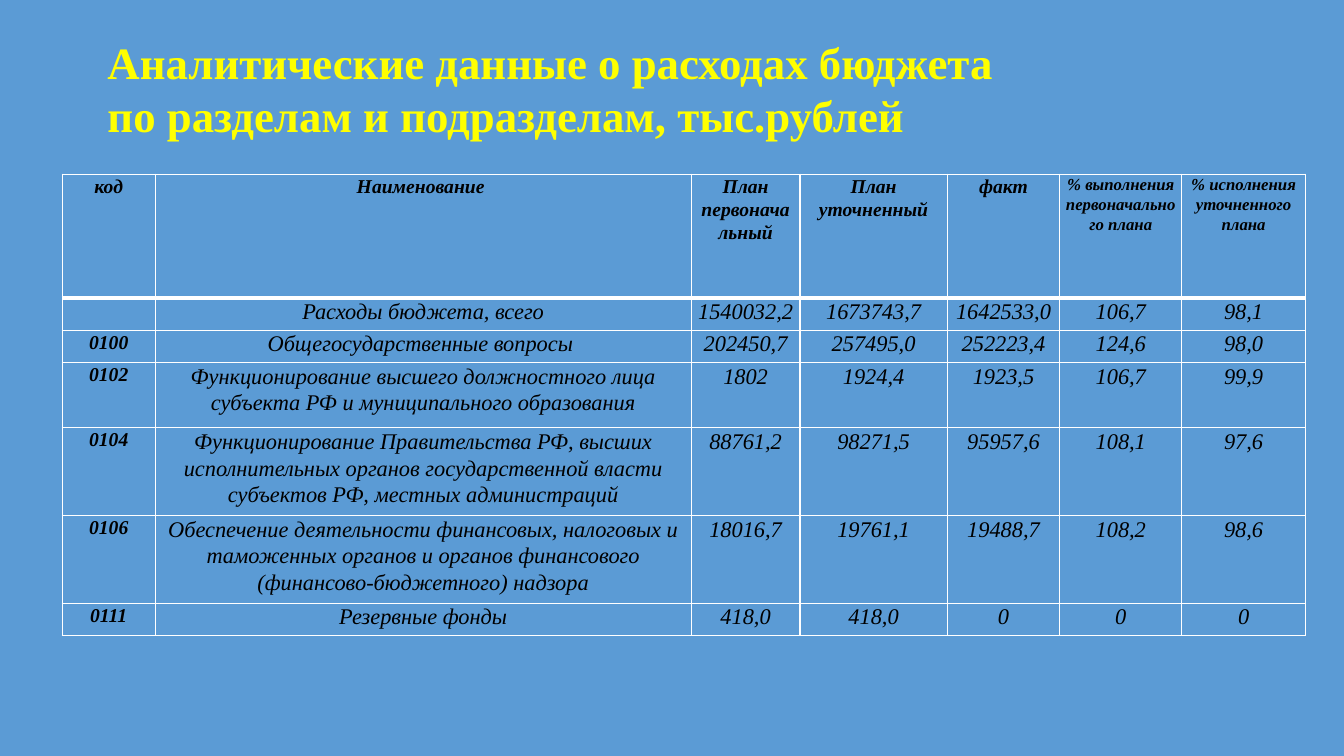
from dataclasses import dataclass

from lxml.etree import SubElement
from pptx import Presentation
from pptx.dml.color import RGBColor as Rgb
from pptx.enum.text import MSO_ANCHOR as Anchor, PP_ALIGN as Align
from pptx.oxml.ns import qn
from pptx.slide import Slide
from pptx.table import _Cell as Cell
from pptx.text.text import _Paragraph as Paragraph
from pptx.util import Cm, Length, Pt


@dataclass(frozen=True)
class Theme:
    font: str = "Times New Roman"
    background: str = "5B9BD5"
    title: str = "FFFF00"
    text: str = "000000"
    border: str = "FFFFFF"
    title_size: Length = Pt(32)
    body_size: Length = Pt(16)
    code_size: Length = Pt(14)
    small_size: Length = Pt(12)
    thin: Length = Pt(1)
    thick: Length = Pt(3)


THEME = Theme()


@dataclass(frozen=True)
class Column:
    width: float
    header: str
    header_size: Length = THEME.code_size


@dataclass(frozen=True)
class Row:
    height: float
    values: tuple[str, ...]


TITLE = "Аналитические данные о расходах бюджета\nпо разделам и подразделам, тыс.рублей"
HEADER_HEIGHT = 3.12
ONE_LINE, TWO_LINES, THREE_LINES = 0.81, 1.65, 2.21

COLUMNS = [
    Column(2.34, "код"),
    Column(13.51, "Наименование "),
    Column(2.74, "План первоначальный"),
    Column(3.71, "План уточненный"),
    Column(2.84, "факт"),
    Column(3.07, "% выполнения первоначального плана", THEME.small_size),
    Column(3.12, "% исполнения уточненного плана", THEME.small_size),
]

ROWS = [
    Row(ONE_LINE, ("", "Расходы бюджета, всего",
                   "1540032,2", "1673743,7", "1642533,0", "106,7", "98,1")),
    Row(ONE_LINE, ("0100", "Общегосударственные вопросы ",
                   "202450,7", "257495,0", "252223,4", "124,6", "98,0")),
    Row(TWO_LINES, ("0102", "Функционирование высшего должностного лица "
                    "субъекта РФ и муниципального образования",
                    "1802", "1924,4", "1923,5", "106,7", "99,9")),
    Row(THREE_LINES, ("0104", "Функционирование Правительства РФ, высших "
                      "исполнительных органов государственной власти "
                      "субъектов РФ, местных администраций",
                      "88761,2", "98271,5", "95957,6", "108,1", "97,6")),
    Row(THREE_LINES, ("0106", "Обеспечение деятельности финансовых, налоговых и "
                      "таможенных органов и органов финансового "
                      "(финансово-бюджетного) надзора",
                      "18016,7", "19761,1", "19488,7", "108,2", "98,6")),
    Row(ONE_LINE, ("0111", "Резервные фонды", "418,0", "418,0", "0", "0", "0")),
]


def format_runs(p: Paragraph, size: Length, color: str, bold: bool, italic: bool) -> None:
    for r in p.runs:
        r.font.name = THEME.font
        r.font.size = size
        r.font.bold = bold
        r.font.italic = italic
        r.font.color.rgb = Rgb.from_string(color)


def set_border(cell: Cell, side: str, width: Length) -> None:
    line = SubElement(cell._tc.get_or_add_tcPr(), qn(f"a:ln{side}"), w=str(int(width)))
    SubElement(SubElement(line, qn("a:solidFill")), qn("a:srgbClr"), val=THEME.border)


def fill_cell(cell: Cell, text: str, size: Length, bold: bool,
              top: Length, bottom: Length) -> None:
    for side, width in (("L", THEME.thin), ("R", THEME.thin), ("T", top), ("B", bottom)):
        set_border(cell, side, width)
    cell.fill.solid()
    cell.fill.fore_color.rgb = Rgb.from_string(THEME.background)
    cell.margin_left = cell.margin_right = Cm(0.15)
    cell.margin_top = cell.margin_bottom = 0
    if text:
        cell.text_frame.text = text
        p = cell.text_frame.paragraphs[0]
        p.alignment = Align.CENTER
        p.line_spacing = 1.07
        format_runs(p, size, THEME.text, bold, True)


def add_title(s: Slide) -> None:
    tf = s.shapes.add_textbox(Cm(2.46), Cm(0.71), Cm(31.4), Cm(3.5)).text_frame
    tf.word_wrap = True
    tf.vertical_anchor = Anchor.MIDDLE
    tf.margin_bottom = Cm(0.61)
    tf.text = TITLE
    for p in tf.paragraphs:
        format_runs(p, THEME.title_size, THEME.title, True, False)


def add_budget_table(s: Slide) -> None:
    width = sum(c.width for c in COLUMNS)
    height = HEADER_HEIGHT + sum(r.height for r in ROWS)
    table = s.shapes.add_table(len(ROWS) + 1, len(COLUMNS),
                               Cm(1.57), Cm(4.39), Cm(width), Cm(height)).table
    table.horz_banding = False
    table.rows[0].height = Cm(HEADER_HEIGHT)
    for j, column in enumerate(COLUMNS):
        table.columns[j].width = Cm(column.width)
        fill_cell(table.cell(0, j), column.header, column.header_size, True,
                  THEME.thin, THEME.thick)
    for i, row in enumerate(ROWS, start=1):
        table.rows[i].height = Cm(row.height)
        top = THEME.thick if i == 1 else THEME.thin
        for j, value in enumerate(row.values):
            is_code = j == 0
            size = THEME.code_size if is_code else THEME.body_size
            fill_cell(table.cell(i, j), value, size, is_code, top, THEME.thin)


def main() -> None:
    prs = Presentation()
    prs.slide_width, prs.slide_height = Cm(33.87), Cm(19.05)
    s = prs.slides.add_slide(prs.slide_layouts[6])
    s.background.fill.solid()
    s.background.fill.fore_color.rgb = Rgb.from_string(THEME.background)
    add_budget_table(s)
    add_title(s)
    prs.save("out.pptx")


if __name__ == "__main__":
    main()
